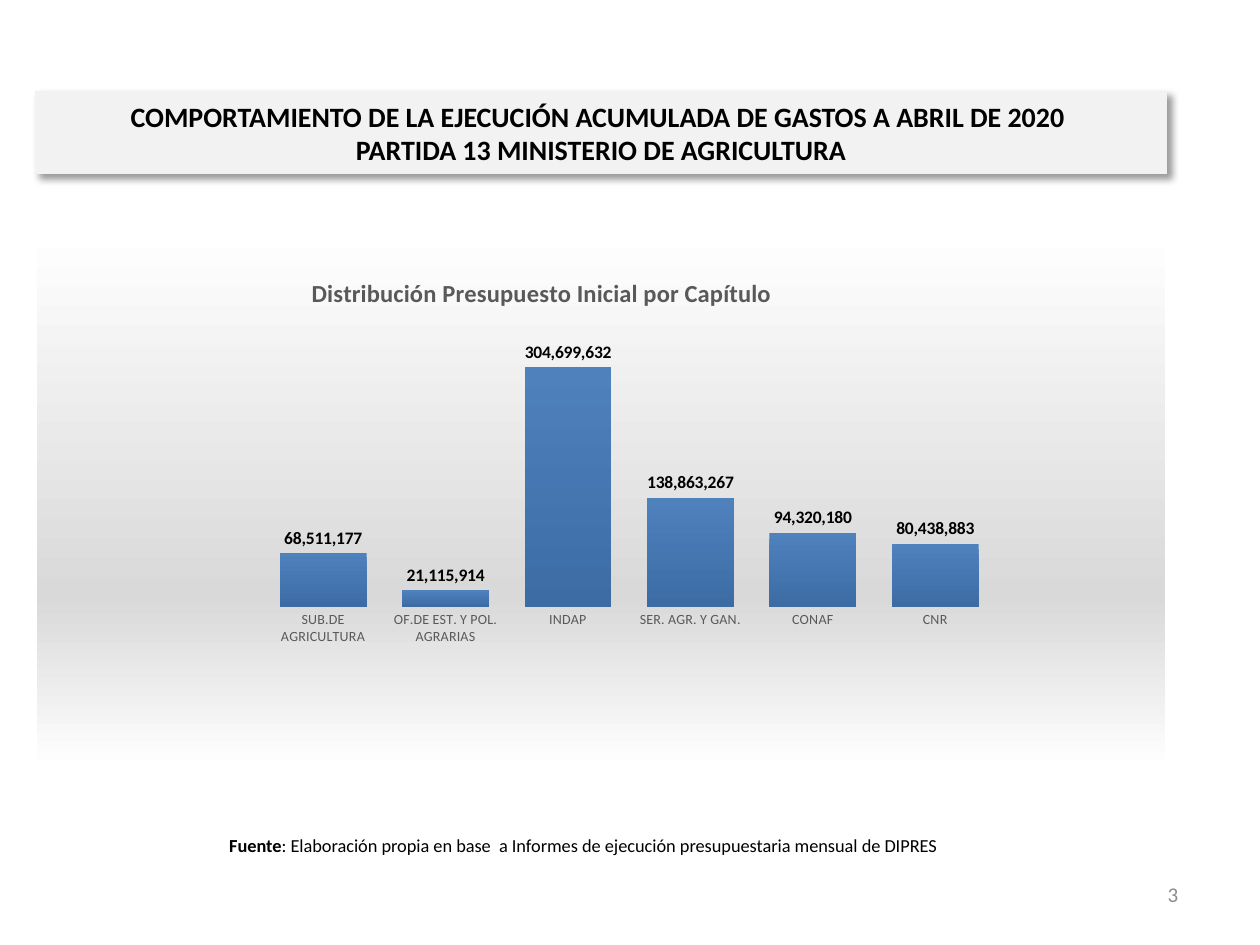
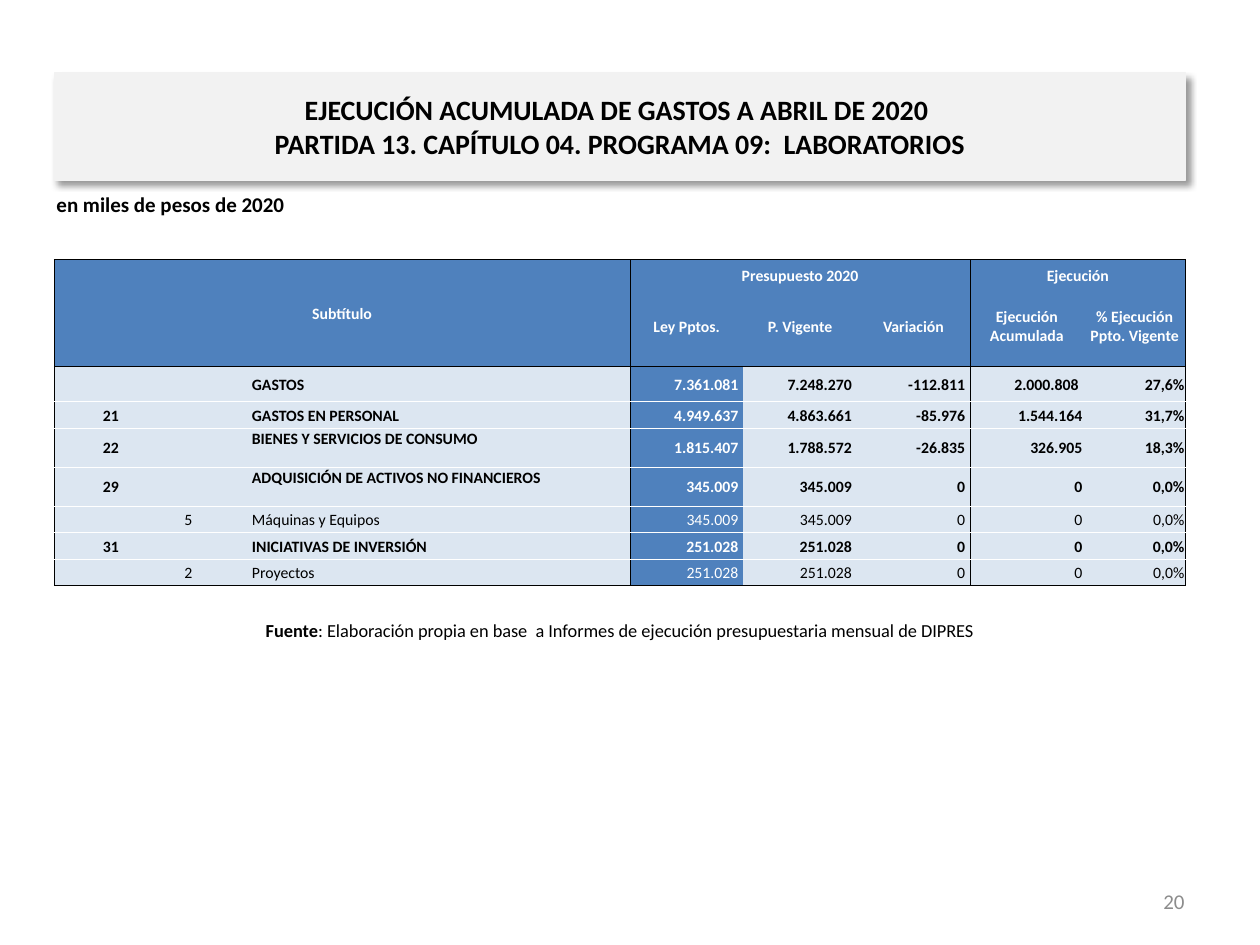
from lxml import etree
from pptx import Presentation
from pptx import util as u
from pptx.chart import data as chart_data
from pptx.dml.color import RGBColor
from pptx.enum import chart as chart_enum
from pptx.enum import text as t
from pptx.oxml import parse_xml
from pptx.oxml.ns import nsdecls, qn

FONT = "Calibri"
COLORS = {
    "black": "000000",
    "white": "FFFFFF",
    "band": "F2F2F2",
    "page": "8C8C8C",
    "gray_text": "595959",
    "gray_fill": "D9D9D9",
    "blue": "4F81BD",
    "dark_blue": "3D6CA4",
    "pale_blue": "DCE6F1",
}
ALIGN = {"l": t.PP_ALIGN.LEFT, "c": t.PP_ALIGN.CENTER, "r": t.PP_ALIGN.RIGHT}
ANCHOR = {"t": t.MSO_ANCHOR.TOP, "m": t.MSO_ANCHOR.MIDDLE, "b": t.MSO_ANCHOR.BOTTOM}
BAND_WIDTH = 8.98
SOURCE = ": Elaboración propia en base  a Informes de ejecución presupuestaria mensual de DIPRES"

CHAPTERS = {
    "SUB.DE AGRICULTURA": 68511177,
    "OF.DE EST. Y POL. AGRARIAS": 21115914,
    "INDAP": 304699632,
    "SER. AGR. Y GAN.": 138863267,
    "CONAF": 94320180,
    "CNR": 80438883,
}

TABLE_SIZE = 9
COLUMN_WIDTHS = [0.9, 0.33, 0.33, 3.01, 0.9, 0.9, 0.9, 0.9, 0.81]
ROW_HEIGHTS = [0.21, 0.64, 0.28, 0.21, 0.31, 0.31, 0.21, 0.21, 0.21]
GROUP_STARTS = (0, 4, 7)
HEADER_ROWS = 2
LAW_COLUMN = 4
TOP_ALIGNED_NAMES = ("BIENES Y SERVICIOS DE CONSUMO", "ADQUISICIÓN DE ACTIVOS NO FINANCIEROS")
# first row, first column, last row, last column, text, anchor
MERGED_HEADERS = [
    (0, 0, 1, 3, "Subtítulo", "m"),
    (0, 4, 0, 6, "Presupuesto 2020", "b"),
    (0, 7, 0, 8, "Ejecución", "b"),
]
COLUMN_HEADERS = ["Ley Pptos.", "P. Vigente", "Variación",
                  "Ejecución Acumulada", "% Ejecución Ppto. Vigente"]
# subtitle, item, name, then one value for each column header
BUDGET_ROWS = [
    ("", "", "GASTOS", "7.361.081", "7.248.270", "-112.811", "2.000.808", "27,6%"),
    ("21", "", "GASTOS EN PERSONAL", "4.949.637", "4.863.661", "-85.976", "1.544.164", "31,7%"),
    ("22", "", "BIENES Y SERVICIOS DE CONSUMO", "1.815.407", "1.788.572", "-26.835", "326.905", "18,3%"),
    ("29", "", "ADQUISICIÓN DE ACTIVOS NO FINANCIEROS", "345.009", "345.009", "0", "0", "0,0%"),
    ("", "5", "Máquinas y Equipos", "345.009", "345.009", "0", "0", "0,0%"),
    ("31", "", "INICIATIVAS DE INVERSIÓN", "251.028", "251.028", "0", "0", "0,0%"),
    ("", "2", "Proyectos", "251.028", "251.028", "0", "0", "0,0%"),
]


def rgb(name):
    return RGBColor.from_string(COLORS[name])


def inches(box):
    return [u.Inches(length) for length in box]


def format_font(font, size, color="black", bold=False):
    font.name, font.size, font.bold = FONT, u.Pt(size), bold
    font.color.rgb = rgb(color)


def write_text(frame, text, size=TABLE_SIZE, color="black", bold=False, align="l", lead=""):
    """Fill the first paragraph; lead is a bold opening and a newline breaks the line."""
    paragraph = frame.paragraphs[0]
    paragraph.alignment = ALIGN[align]
    if lead:
        run = paragraph.add_run()
        run.text = lead
        format_font(run.font, size, color, True)
    for number, line in enumerate(text.split("\n")):
        if number:
            paragraph.add_line_break()
        run = paragraph.add_run()
        run.text = line
        format_font(run.font, size, color, bold)


def add_text(slide, box, text, anchor="m", **text_format):
    frame = slide.shapes.add_textbox(*inches(box)).text_frame
    frame.word_wrap = True
    frame.vertical_anchor = ANCHOR[anchor]
    write_text(frame, text, **text_format)


def add_title_band(slide, box, text):
    title = slide.shapes.title
    title.left, title.top, title.width, title.height = inches(box)
    title.fill.solid()
    title.fill.fore_color.rgb = rgb("band")
    title.line.color.rgb = rgb("band")
    title.line.width = u.Pt(0.75)
    frame = title.text_frame
    frame.auto_size = t.MSO_AUTO_SIZE.NONE
    frame.word_wrap = True
    frame.vertical_anchor = ANCHOR["m"]
    frame.margin_left = frame.margin_right = u.Inches(0.11)
    write_text(frame, text, size=16, bold=True, align="c")
    title.element.spPr.append(parse_xml(
        f'<a:effectLst {nsdecls("a")}><a:outerShdw blurRad="{u.Pt(4)}" dist="{u.Pt(3)}"'
        f' dir="2700000" algn="tl" rotWithShape="0"><a:srgbClr val="{COLORS["black"]}">'
        '<a:alpha val="40000"/></a:srgbClr></a:outerShdw></a:effectLst>'))


def add_source(slide, box):
    add_text(slide, box, SOURCE, size=10.5, align="c", lead="Fuente")


def add_page_number(slide, left, top, number):
    add_text(slide, (left, top, 2.33, 0.4), str(number), size=12, color="page", align="r")


def set_layout(parent, index, inner=False, **fractions):
    """Give a chart part a fixed place, as fractions of the chart."""
    for old in parent.findall(qn("c:layout")):
        parent.remove(old)
    layout = parse_xml(f'<c:layout {nsdecls("c")}><c:manualLayout/></c:layout>')
    settings = {"layoutTarget": "inner"} if inner else {}
    settings.update({f"{side}Mode": "edge" for side in "xy"})
    settings.update(fractions)
    for name, value in settings.items():
        etree.SubElement(layout[0], qn(f"c:{name}")).set("val", str(value))
    parent.insert(index, layout)


def fill_chart_area(chart):
    stops = "".join(
        f'<a:gs pos="{position}000"><a:srgbClr val="{COLORS[color]}"/></a:gs>'
        for position, color in ((0, "white"), (68, "gray_fill"), (100, "white")))
    chart.element.find(qn("c:chart")).addnext(parse_xml(
        f'<c:spPr {nsdecls("c", "a")}><a:gradFill><a:gsLst>{stops}</a:gsLst>'
        f'<a:lin ang="5400000" scaled="0"/></a:gradFill><a:ln w="{u.Pt(0.75)}"><a:solidFill>'
        f'<a:srgbClr val="{COLORS["white"]}"/></a:solidFill></a:ln></c:spPr>'))


def add_chapter_chart(slide, box):
    data = chart_data.CategoryChartData(number_format="#,##0")
    data.categories = list(CHAPTERS)
    data.add_series("Presupuesto Inicial", list(CHAPTERS.values()))
    chart = slide.shapes.add_chart(
        chart_enum.XL_CHART_TYPE.COLUMN_CLUSTERED, *inches(box), data).chart
    format_font(chart.font, 10)
    chart.has_legend = False
    chart.has_title = True
    write_text(chart.chart_title.text_frame, "Distribución Presupuesto Inicial por Capítulo",
               size=14, color="gray_text", bold=True, align="c")
    set_layout(chart.element.find(".//" + qn("c:title")), 1, x=0.24, y=0.08)
    set_layout(chart.element.find(".//" + qn("c:plotArea")), 0, inner=True,
               x=0.2, y=0.19, w=0.65, h=0.51)
    fill_chart_area(chart)

    chapters = chart.category_axis
    chapters.major_tick_mark = chart_enum.XL_TICK_MARK.NONE
    chapters.format.line.fill.background()
    format_font(chapters.tick_labels.font, 8, "gray_text")
    amounts = chart.value_axis
    amounts.minimum_scale, amounts.maximum_scale = 0, 350000000
    amounts.has_major_gridlines = False
    amounts.visible = False

    plot = chart.plots[0]
    plot.gap_width = 41
    plot.vary_by_categories = False
    fill = plot.series[0].format.fill
    fill.gradient()
    fill.gradient_angle = 270
    for stop, color, position in zip(fill.gradient_stops, ("blue", "dark_blue"), (0, 1)):
        stop.color.rgb = rgb(color)
        stop.position = position
    labels = plot.series[0].data_labels
    labels.show_value = True
    labels.number_format, labels.number_format_is_linked = "#,##0", False
    labels.position = chart_enum.XL_LABEL_POSITION.OUTSIDE_END
    format_font(labels.font, 10, bold=True)


def set_cell_borders(cell, row, column):
    """Black around each column group and the header, white between budget rows."""
    last_row = row + (cell.span_height if cell.is_merge_origin else 1) - 1
    last_column = column + (cell.span_width if cell.is_merge_origin else 1) - 1
    between = "white" if row >= HEADER_ROWS else None
    bottoms = (HEADER_ROWS - 1, len(ROW_HEIGHTS) - 1)
    edges = {
        "L": "black" if column in GROUP_STARTS else None,
        "R": "black" if last_column + 1 in (*GROUP_STARTS, len(COLUMN_WIDTHS)) else None,
        "T": "black" if row in (0, HEADER_ROWS) else between,
        "B": "black" if last_row in bottoms else between,
    }
    properties = cell._tc.get_or_add_tcPr()
    for index, (side, color) in enumerate(edges.items()):
        paint = (f'<a:solidFill><a:srgbClr val="{COLORS[color]}"/></a:solidFill>'
                 if color else "<a:noFill/>")
        properties.insert(index, parse_xml(
            f'<a:ln{side} {nsdecls("a")} w="{u.Pt(0.5)}">{paint}</a:ln{side}>'))


def shrink_empty_cell(cell):
    """Keep an empty cell from stretching its row with the default text size."""
    paragraph = cell._tc.find(".//" + qn("a:p"))
    etree.SubElement(paragraph, qn("a:endParaRPr")).set("sz", str(TABLE_SIZE * 100))


def write_cell(cell, text, anchor="m", right=0.01, **text_format):
    cell.vertical_anchor = ANCHOR[anchor]
    cell.margin_right = u.Inches(right)
    write_text(cell.text_frame, text, **text_format)


def write_headers(table):
    style = {"color": "white", "bold": True, "align": "c"}
    for top, left, bottom, right, text, anchor in MERGED_HEADERS:
        table.cell(top, left).merge(table.cell(bottom, right))
        write_cell(table.cell(top, left), text, anchor, **style)
    for column, text in enumerate(COLUMN_HEADERS, LAW_COLUMN):
        write_cell(table.cell(1, column), text, **style)


def write_budget_rows(table):
    for row, (subtitle, item, name, *values) in enumerate(BUDGET_ROWS, HEADER_ROWS):
        bold = not item
        for column, code in enumerate((subtitle, item)):
            if code:
                write_cell(table.cell(row, column), code, bold=bold, align="c")
        anchor = "t" if name in TOP_ALIGNED_NAMES else "m"
        write_cell(table.cell(row, 3), name, anchor, bold=bold)
        for column, value in enumerate(values, LAW_COLUMN):
            padded = column < 7 or (column == 7 and name == "GASTOS")
            write_cell(table.cell(row, column), value, right=0.04 if padded else 0.01,
                       color="white" if column == LAW_COLUMN else "black",
                       bold=bold, align="r")


def add_budget_table(slide, left, top):
    box = (left, top, sum(COLUMN_WIDTHS), sum(ROW_HEIGHTS))
    table = slide.shapes.add_table(len(ROW_HEIGHTS), len(COLUMN_WIDTHS), *inches(box)).table
    for column, width in zip(table.columns, COLUMN_WIDTHS):
        column.width = u.Inches(width)
    for row, height in zip(table.rows, ROW_HEIGHTS):
        row.height = u.Inches(height)
    for cell in table.iter_cells():
        cell.margin_left = cell.margin_right = cell.margin_top = u.Inches(0.01)
        cell.margin_bottom = 0
    write_headers(table)
    write_budget_rows(table)
    for row in range(len(ROW_HEIGHTS)):
        for column in range(len(COLUMN_WIDTHS)):
            cell = table.cell(row, column)
            blue = row < HEADER_ROWS or column == LAW_COLUMN
            cell.fill.solid()
            cell.fill.fore_color.rgb = rgb("blue" if blue else "pale_blue")
            set_cell_borders(cell, row, column)
            if not cell.text_frame.text:
                shrink_empty_cell(cell)


def build_chart_slide(slide):
    left = 0.28
    add_title_band(slide, (left, 0.73, BAND_WIDTH, 0.65),
                   "COMPORTAMIENTO DE LA EJECUCIÓN ACUMULADA DE GASTOS A ABRIL DE 2020 \n"
                   "PARTIDA 13 MINISTERIO DE AGRICULTURA")
    add_chapter_chart(slide, (left, 1.81, BAND_WIDTH, 4.3))
    add_source(slide, (0.39, 6.51, 8.48, 0.4))
    add_page_number(slide, 7.12, 6.9, 3)


def build_table_slide(slide):
    left = 0.43
    add_title_band(slide, (left, 0.58, BAND_WIDTH, 0.85),
                   "EJECUCIÓN ACUMULADA DE GASTOS A ABRIL DE 2020 \n"
                   "PARTIDA 13. CAPÍTULO 04. PROGRAMA 09:  LABORATORIOS")
    add_text(slide, (0.35, 1.47, 8.44, 0.31), "en miles de pesos de 2020",
             anchor="t", size=12, bold=True)
    add_budget_table(slide, left, 2.06)
    add_source(slide, (left, 4.85, BAND_WIDTH, 0.31))
    add_page_number(slide, 7.17, 6.95, 20)


def main():
    presentation = Presentation()
    presentation.slide_width, presentation.slide_height = inches((10, 7.5))
    title_only = presentation.slide_layouts[5]
    for build in (build_chart_slide, build_table_slide):
        build(presentation.slides.add_slide(title_only))
    presentation.save("out.pptx")


if __name__ == "__main__":
    main()
